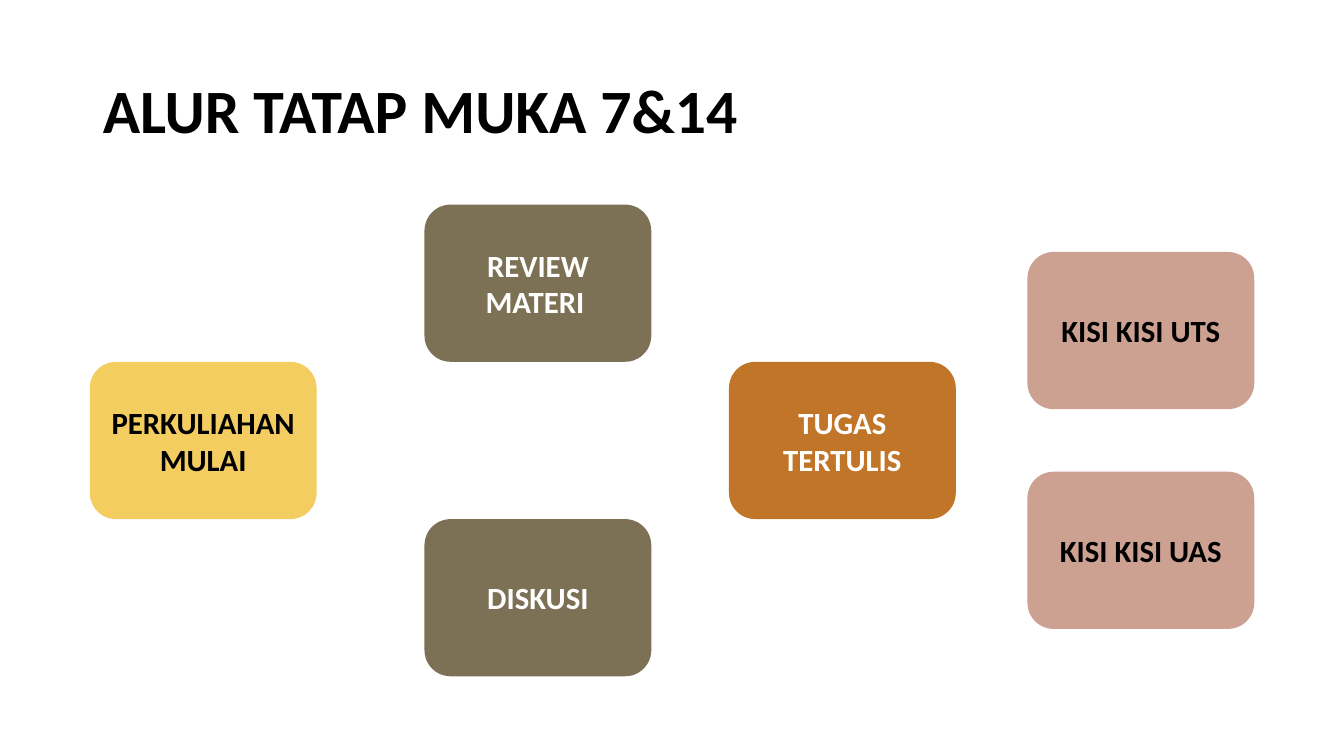
from pptx import Presentation
from pptx.dml.color import RGBColor
from pptx.enum import shapes, text
from pptx.util import Inches, Pt

FONT = "Calibri"
BLACK = RGBColor(0x00, 0x00, 0x00)
WHITE = RGBColor(0xFF, 0xFF, 0xFF)
YELLOW = RGBColor(0xF3, 0xCD, 0x60)
OLIVE = RGBColor(0x7C, 0x71, 0x54)
ORANGE = RGBColor(0xC1, 0x75, 0x29)
ROSE = RGBColor(0xCC, 0xA1, 0x92)

BOX_W, BOX_H = 2.25, 1.56
MIDDLE = 3.59
STEPS = [
    (0.89, MIDDLE, YELLOW, BLACK, [("PERKULIAHAN MULAI", 22, True)]),
    (4.21, MIDDLE - BOX_H, OLIVE, WHITE,
     [("REVIEW MATERI", 22, True), (" ", 18, False)]),
    (4.21, MIDDLE + BOX_H, OLIVE, WHITE, [("DISKUSI", 22, True)]),
    (10.19, MIDDLE - 1.09, ROSE, BLACK, [("KISI KISI UTS", 22, True)]),
    (10.19, MIDDLE + 1.09, ROSE, BLACK, [("KISI KISI UAS", 22, True)]),
    (7.23, MIDDLE, ORANGE, WHITE, [("TUGAS TERTULIS", 22, True)]),
]


def add_run(p, words, size, color, bold):
    r = p.add_run()
    r.text = words
    r.font.name = FONT
    r.font.size = Pt(size)
    r.font.bold = bold
    r.font.color.rgb = color


def set_title(s, words):
    sp = s.shapes.title
    sp.left, sp.top = Inches(0.92), Inches(0.4)
    sp.width, sp.height = Inches(11.5), Inches(1.45)
    tf = sp.text_frame
    tf.word_wrap = True
    tf.vertical_anchor = text.MSO_ANCHOR.MIDDLE
    p = tf.paragraphs[0]
    p.alignment = text.PP_ALIGN.LEFT
    p.line_spacing = 0.9
    add_run(p, words, 44, BLACK, True)


def add_step(s, left, top, fill, color, runs):
    sp = s.shapes.add_shape(shapes.MSO_SHAPE.ROUNDED_RECTANGLE, Inches(left),
                            Inches(top), Inches(BOX_W), Inches(BOX_H))
    sp.shadow.inherit = False
    sp.fill.solid()
    sp.fill.fore_color.rgb = fill
    sp.line.fill.background()
    tf = sp.text_frame
    tf.word_wrap = True
    tf.vertical_anchor = text.MSO_ANCHOR.MIDDLE
    p = tf.paragraphs[0]
    p.alignment = text.PP_ALIGN.CENTER
    for words, size, bold in runs:
        add_run(p, words, size, color, bold)


def main():
    prs = Presentation()
    prs.slide_width, prs.slide_height = Inches(13.33), Inches(7.5)
    s = prs.slides.add_slide(prs.slide_layouts[5])
    set_title(s, "ALUR TATAP MUKA 7&14")
    for step in STEPS:
        add_step(s, *step)
    prs.save("out.pptx")


if __name__ == "__main__":
    main()
